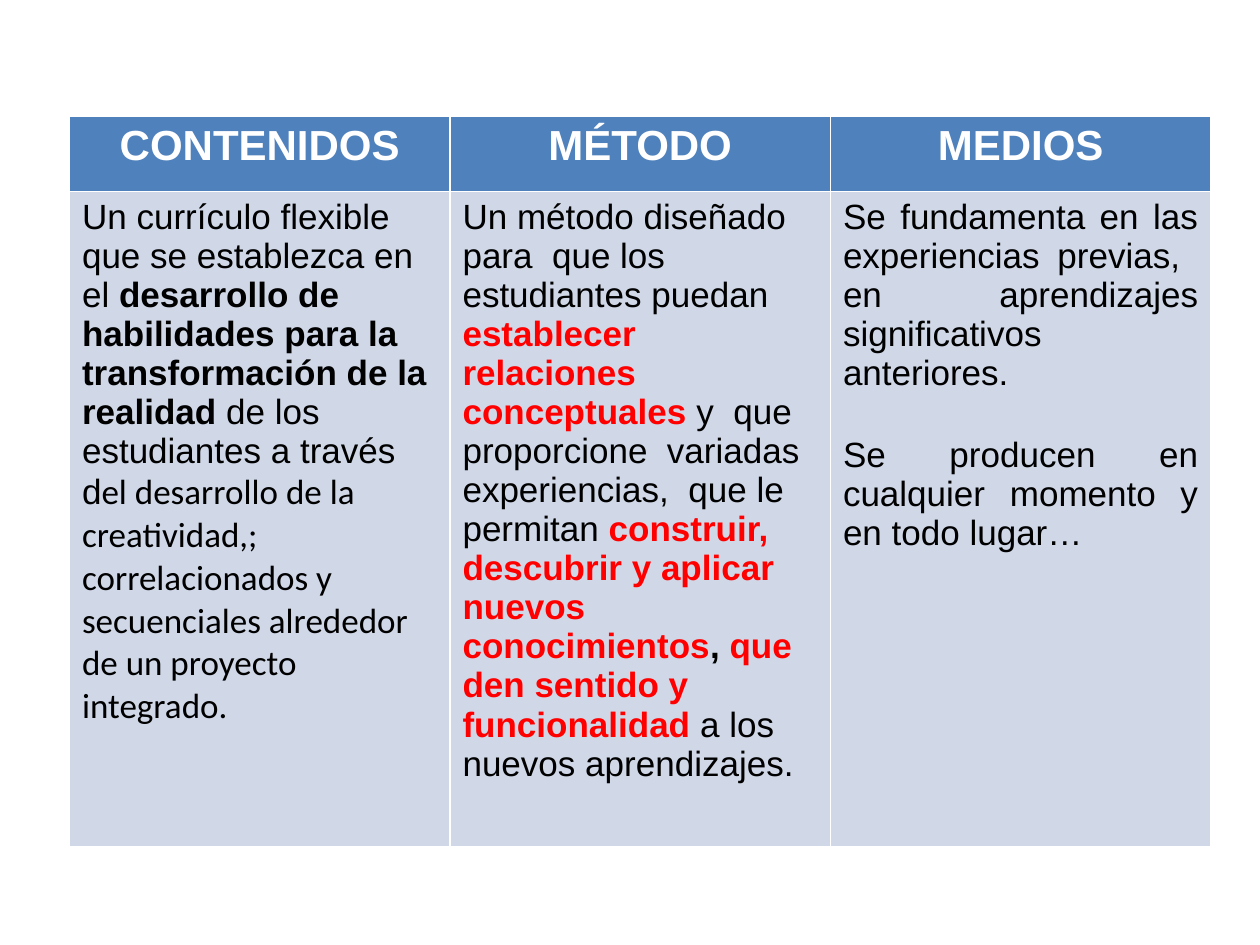
from pptx import Presentation
from pptx.dml.color import RGBColor
from pptx.enum.text import PP_ALIGN
from pptx.util import Cm, Pt

LEFT, CENTER, JUSTIFY = PP_ALIGN.LEFT, PP_ALIGN.CENTER, PP_ALIGN.JUSTIFY
BLACK, RED, WHITE = "000000", "FF0000", "FFFFFF"
HEADER_FILL, BODY_FILL = "4F81BD", "D0D8E8"

PLAIN = ("Arial", BLACK, False)
BOLD = ("Arial", BLACK, True)
KEY = ("Arial", RED, True)
CALIBRI = ("Calibri", BLACK, False)
HEADER = ("Arial", WHITE, True)

COLUMNS = [
    ("CONTENIDOS", LEFT, [[
        ("Un currículo flexible que se establezca en el ", PLAIN),
        ("desarrollo de  habilidades para la transformación de la realidad", BOLD),
        (" de los estudiantes a través d", PLAIN),
        ("el desarrollo de la creatividad,; correlacionados y secuenciales "
         "alrededor de un proyecto integrado.", CALIBRI),
    ]]),
    ("MÉTODO", LEFT, [[
        ("Un método diseñado para  que los estudiantes puedan ", PLAIN),
        ("establecer relaciones conceptuales ", KEY),
        ("y  que proporcione  variadas experiencias,  que le permitan ", PLAIN),
        ("construir, descubrir y aplicar nuevos conocimientos", KEY),
        (", ", BOLD),
        ("que den sentido y funcionalidad ", KEY),
        ("a los nuevos aprendizajes.", PLAIN),
    ]]),
    ("MEDIOS", JUSTIFY, [
        [("Se fundamenta en las experiencias previas,  en aprendizajes "
          "significativos anteriores.", PLAIN)],
        [("Se producen en cualquier momento y en todo lugar…", PLAIN)],
    ]),
]

LEFT_EDGE, TOP_EDGE = Cm(1.4), Cm(2.34)
COL_WIDTH = Cm(7.67)
ROW_HEIGHTS = [Cm(1.52), Cm(13.21)]
PARAGRAPH_GAP = Pt(24.4)


def rgb(color):
    return RGBColor.from_string(color)


def fill_cell(cell, fill, paragraphs, size, align):
    cell.fill.solid()
    cell.fill.fore_color.rgb = rgb(fill)
    tf = cell.text_frame
    for i, runs in enumerate(paragraphs):
        p = tf.add_paragraph() if i else tf.paragraphs[0]
        p.alignment = align
        if i:
            p.space_before = PARAGRAPH_GAP
        for text, (font, color, bold) in runs:
            r = p.add_run()
            r.text = text
            r.font.name = font
            r.font.size = Pt(size)
            r.font.bold = bold
            r.font.color.rgb = rgb(color)


prs = Presentation()
prs.slide_width, prs.slide_height = Cm(25.4), Cm(19.05)
s = prs.slides.add_slide(prs.slide_layouts[6])

table = s.shapes.add_table(len(ROW_HEIGHTS), len(COLUMNS), LEFT_EDGE, TOP_EDGE,
                           COL_WIDTH * len(COLUMNS), sum(ROW_HEIGHTS)).table
for row, height in zip(table.rows, ROW_HEIGHTS):
    row.height = height
for c, (title, align, paragraphs) in enumerate(COLUMNS):
    table.columns[c].width = COL_WIDTH
    fill_cell(table.cell(0, c), HEADER_FILL, [[(title, HEADER)]], 24, CENTER)
    fill_cell(table.cell(1, c), BODY_FILL, paragraphs, 20, align)

prs.save("out.pptx")
